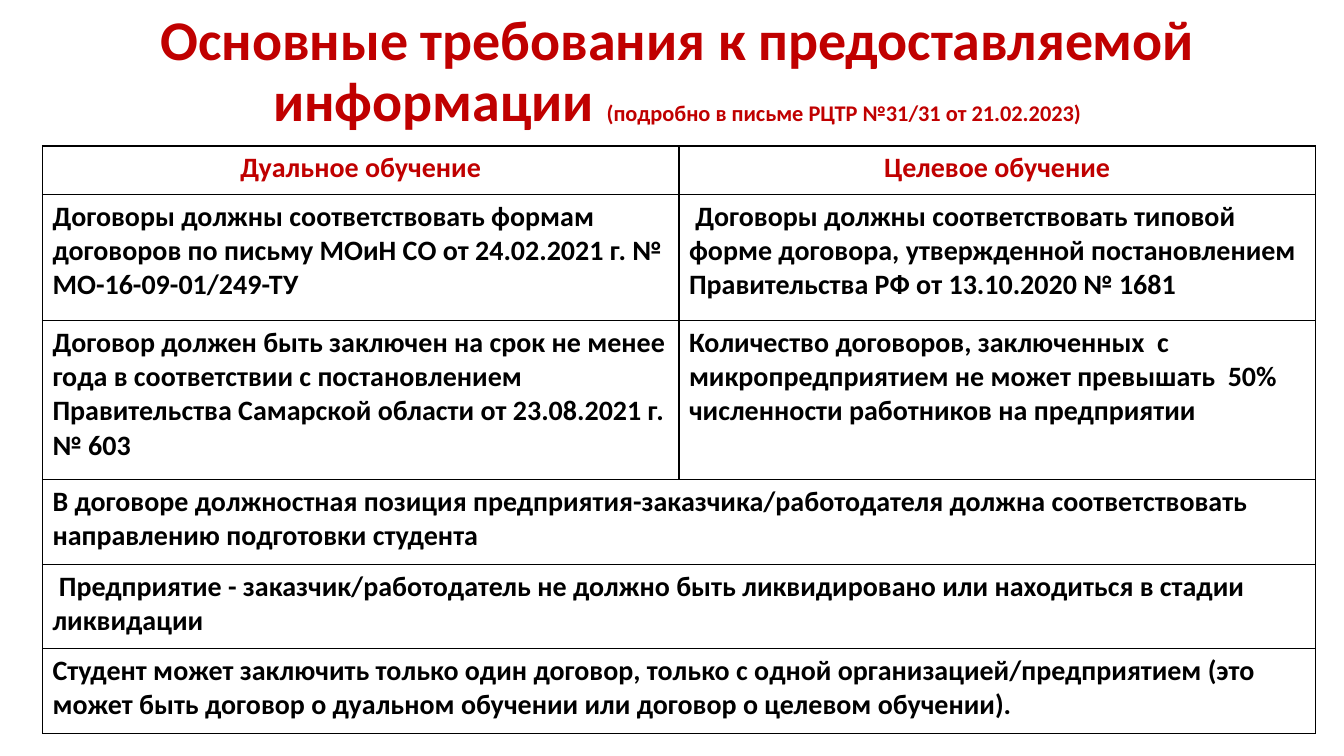
from lxml import etree
from pptx import Presentation
from pptx import util as u
from pptx.dml import color
from pptx.enum import text
from pptx.oxml import ns

TITLE = [
    ("Основные требования к предоставляемой информации ", 40),
    ("(подробно в письме РЦТР №31/31 от 21.02.2023)", 16),
]
HEADERS = ("Дуальное обучение", "Целевое обучение")
REQUIREMENTS = [
    (
        "Договоры должны соответствовать формам договоров по письму МОиН СО от 24.02.2021 г. № МО-16-09-01/249-ТУ",
        " Договоры должны соответствовать типовой форме договора, утвержденной постановлением Правительства РФ от 13.10.2020 № 1681",
    ),
    (
        "Договор должен быть заключен на срок не менее года в соответствии с постановлением Правительства Самарской области от 23.08.2021 г. № 603",
        "Количество договоров, заключенных  с микропредприятием не может превышать  50% численности работников на предприятии",
    ),
    ("В договоре должностная позиция предприятия-заказчика/работодателя должна соответствовать направлению подготовки студента",),
    (" Предприятие - заказчик/работодатель не должно быть ликвидировано или находиться в стадии ликвидации",),
    ("Студент может заключить только один договор, только с одной организацией/предприятием (это может быть договор о дуальном обучении или договор о целевом обучении).",),
]
ROW_HEIGHTS = [1.22, 3.18, 4.01, 2.13, 2.13, 2.13]
COLORS = {"accent": "C00000", "body": "000000", "border": "000000", "paper": "FFFFFF"}
FONT = "Calibri"
TITLE_BOX = (0.56, 0, 33.02, 3.68)
TABLE_LEFT, TABLE_TOP, TABLE_WIDTH = 1.07, 3.68, 32.08


def write(frame, runs, color_name="body", align=text.PP_ALIGN.LEFT, spacing=1.0):
    frame.word_wrap = True
    paragraph = frame.paragraphs[0]
    paragraph.alignment = align
    paragraph.line_spacing = spacing
    for words, size in runs:
        run = paragraph.add_run()
        run.text = words
        run.font.name = FONT
        run.font.size = u.Pt(size)
        run.font.bold = True
        run.font.color.rgb = color.RGBColor.from_string(COLORS[color_name])


def style_cell(cell):
    cell.fill.solid()
    cell.fill.fore_color.rgb = color.RGBColor.from_string(COLORS["paper"])
    properties = cell._tc.get_or_add_tcPr()
    for position, side in enumerate(("lnL", "lnR", "lnT", "lnB")):
        line = etree.Element(ns.qn(f"a:{side}"), w=str(u.Pt(1)))
        fill = etree.SubElement(line, ns.qn("a:solidFill"))
        etree.SubElement(fill, ns.qn("a:srgbClr"), val=COLORS["border"])
        properties.insert(position, line)


def add_title(slide):
    shape = slide.shapes.add_textbox(*map(u.Cm, TITLE_BOX))
    shape.text_frame.vertical_anchor = text.MSO_ANCHOR.MIDDLE
    write(shape.text_frame, TITLE, color_name="accent", align=text.PP_ALIGN.CENTER, spacing=0.9)


def add_requirements(slide):
    rows = [HEADERS] + REQUIREMENTS
    columns = len(HEADERS)
    table = slide.shapes.add_table(
        len(rows), columns, u.Cm(TABLE_LEFT), u.Cm(TABLE_TOP),
        u.Cm(TABLE_WIDTH), u.Cm(sum(ROW_HEIGHTS)),
    ).table
    table.first_row = False
    table.horz_banding = False
    for column in table.columns:
        column.width = u.Cm(TABLE_WIDTH / columns)
    for row_index, (entries, height) in enumerate(zip(rows, ROW_HEIGHTS)):
        table.rows[row_index].height = u.Cm(height)
        for column_index in range(columns):
            style_cell(table.cell(row_index, column_index))
        if len(entries) == 1:
            table.cell(row_index, 0).merge(table.cell(row_index, columns - 1))
        look = {"color_name": "accent", "align": text.PP_ALIGN.CENTER} if row_index == 0 else {}
        for column_index, words in enumerate(entries):
            write(table.cell(row_index, column_index).text_frame, [(words, 20)], **look)


def main():
    presentation = Presentation()
    presentation.slide_width = u.Cm(33.87)
    presentation.slide_height = u.Cm(19.05)
    slide = presentation.slides.add_slide(presentation.slide_layouts[6])
    add_title(slide)
    add_requirements(slide)
    presentation.save("out.pptx")


if __name__ == "__main__":
    main()
